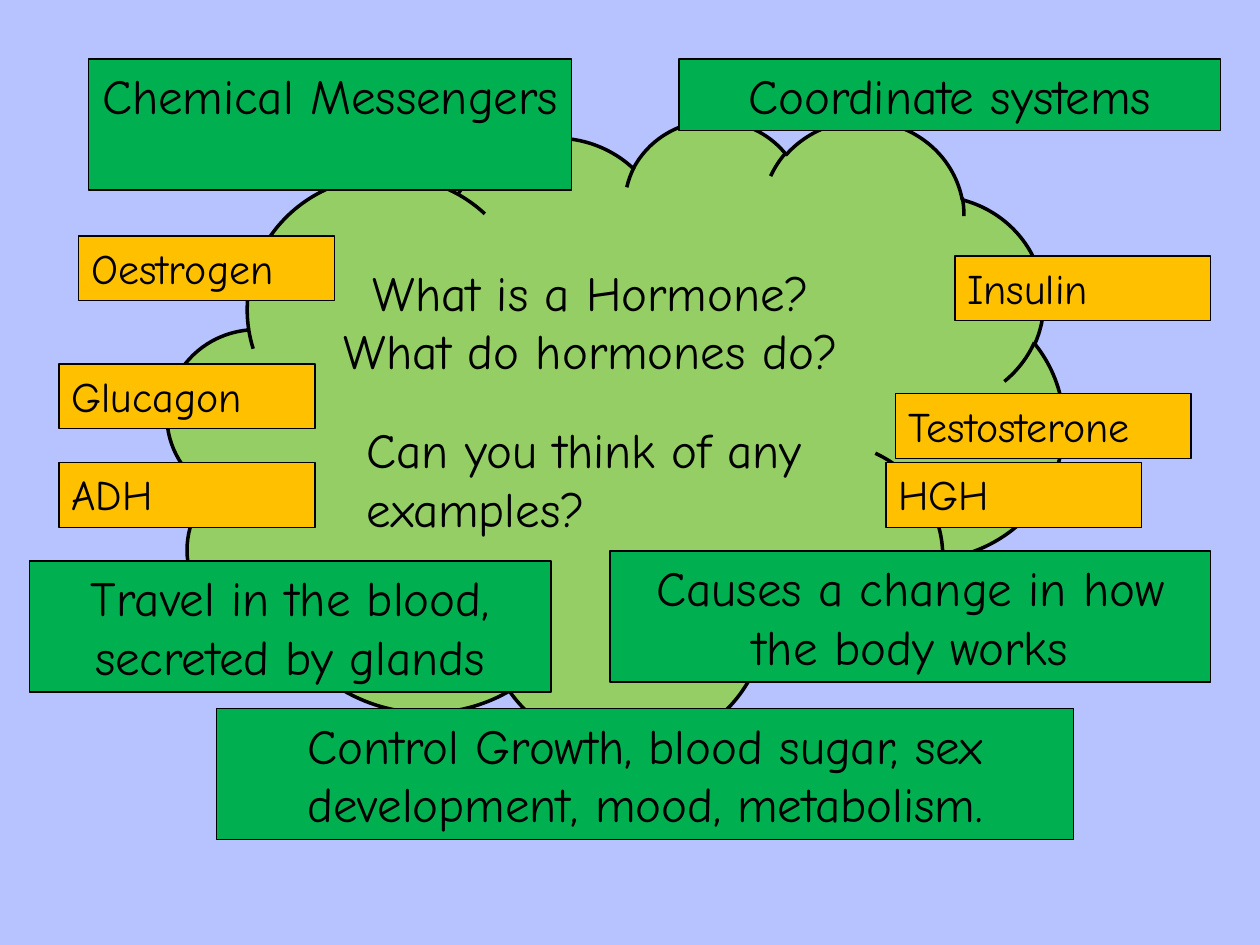
from dataclasses import dataclass

from lxml import etree
from pptx import Presentation
from pptx.dml.color import RGBColor
from pptx.enum.shapes import MSO_SHAPE
from pptx.enum.text import MSO_ANCHOR, MSO_AUTO_SIZE, PP_ALIGN
from pptx.oxml.ns import qn
from pptx.util import Cm, Pt

CLOUD, RECT = MSO_SHAPE.CLOUD, MSO_SHAPE.RECTANGLE
LEFT, CENTER = PP_ALIGN.LEFT, PP_ALIGN.CENTER
TOP = MSO_ANCHOR.TOP
GROW = MSO_AUTO_SIZE.SHAPE_TO_FIT_TEXT


@dataclass(frozen=True)
class Theme:
    font: str = "Comic Neue"
    background: RGBColor = RGBColor(0xB7, 0xC3, 0xFF)
    ink: RGBColor = RGBColor(0, 0, 0)
    cloud: RGBColor = RGBColor(0x92, 0xD0, 0x50)
    fact: RGBColor = RGBColor(0x00, 0xB0, 0x50)
    hormone: RGBColor = RGBColor(0xFF, 0xC0, 0x00)
    large: Pt = Pt(28)
    medium: Pt = Pt(24)
    cloud_line: Pt = Pt(2)
    box_line: Pt = Pt(0.75)


THEME = Theme()
ONE_LINE, TWO_LINES, HORMONE_HEIGHT = 1.44, 2.64, 1.3
HORMONE_WIDTH = 5.16

# Left, top, width, height in cm
FACTS = [
    ("Chemical Messengers", 1.79, 1.19, 9.73, TWO_LINES),
    ("Coordinate systems", 13.69, 1.19, 10.92, ONE_LINE),
    ("Causes a change in how the body works", 12.3, 11.11, 12.11, TWO_LINES),
    ("Travel in the blood, secreted by glands", 0.59, 11.31, 10.52, TWO_LINES),
    ("Control Growth, blood sugar, sex development, mood, metabolism.",
     4.37, 14.29, 17.27, TWO_LINES),
]
# Left, top, width in cm
HORMONES = [
    ("Insulin", 19.25, 5.16, HORMONE_WIDTH),
    ("Testosterone", 18.06, 7.94, 5.95),
    ("Oestrogen", 1.59, 4.76, HORMONE_WIDTH),
    ("Glucagon", 1.19, 7.34, HORMONE_WIDTH),
    ("ADH", 1.19, 9.33, HORMONE_WIDTH),
    ("HGH", 17.86, 9.33, HORMONE_WIDTH),
]


def write(sp, text, size, align):
    tf = sp.text_frame
    tf.word_wrap = True
    tf.auto_size = GROW
    tf.vertical_anchor = TOP
    tf.text = text
    for p in tf.paragraphs:
        p.alignment = align
        p.font.name = THEME.font
        p.font.size = size
        p.font.color.rgb = THEME.ink


def add_shape(s, kind, box, fill, line):
    sp = s.shapes.add_shape(kind, *map(Cm, box))
    sp.shadow.inherit = False
    sp.fill.solid()
    sp.fill.fore_color.rgb = fill
    sp.line.color.rgb = THEME.ink
    sp.line.width = line
    return sp


def add_cloud(s, box, opacity):
    sp = add_shape(s, CLOUD, box, THEME.cloud, THEME.cloud_line)
    color = sp.fill._xPr.find(qn("a:solidFill"))[0]
    etree.SubElement(color, qn("a:alpha")).set("val", str(opacity * 1000))


def add_question(s, text, box, align):
    write(s.shapes.add_textbox(*map(Cm, box)), text, THEME.large, align)


def add_label(s, text, box, fill, size, align):
    sp = add_shape(s, RECT, box, fill, THEME.box_line)
    write(sp, text, size, align)


def main():
    prs = Presentation()
    prs.slide_width, prs.slide_height = Cm(25.4), Cm(19.05)
    s = prs.slides.add_slide(prs.slide_layouts[6])
    s.background.fill.solid()
    s.background.fill.fore_color.rgb = THEME.background

    # Cloud with the questions
    add_cloud(s, (3.38, 2.39, 18.06, 12.7), opacity=87)
    add_question(s, "What is a Hormone?\nWhat do hormones do?",
                 (5.77, 5.16, 12.29, TWO_LINES), CENTER)
    add_question(s, "Can you think of any examples?",
                 (7.14, 8.33, 11.51, TWO_LINES), LEFT)

    # Facts about hormones
    for text, *box in FACTS:
        add_label(s, text, box, THEME.fact, THEME.large, CENTER)

    # Example hormones
    for text, *box in HORMONES:
        add_label(s, text, (*box, HORMONE_HEIGHT), THEME.hormone,
                  THEME.medium, LEFT)

    prs.save("out.pptx")


if __name__ == "__main__":
    main()
